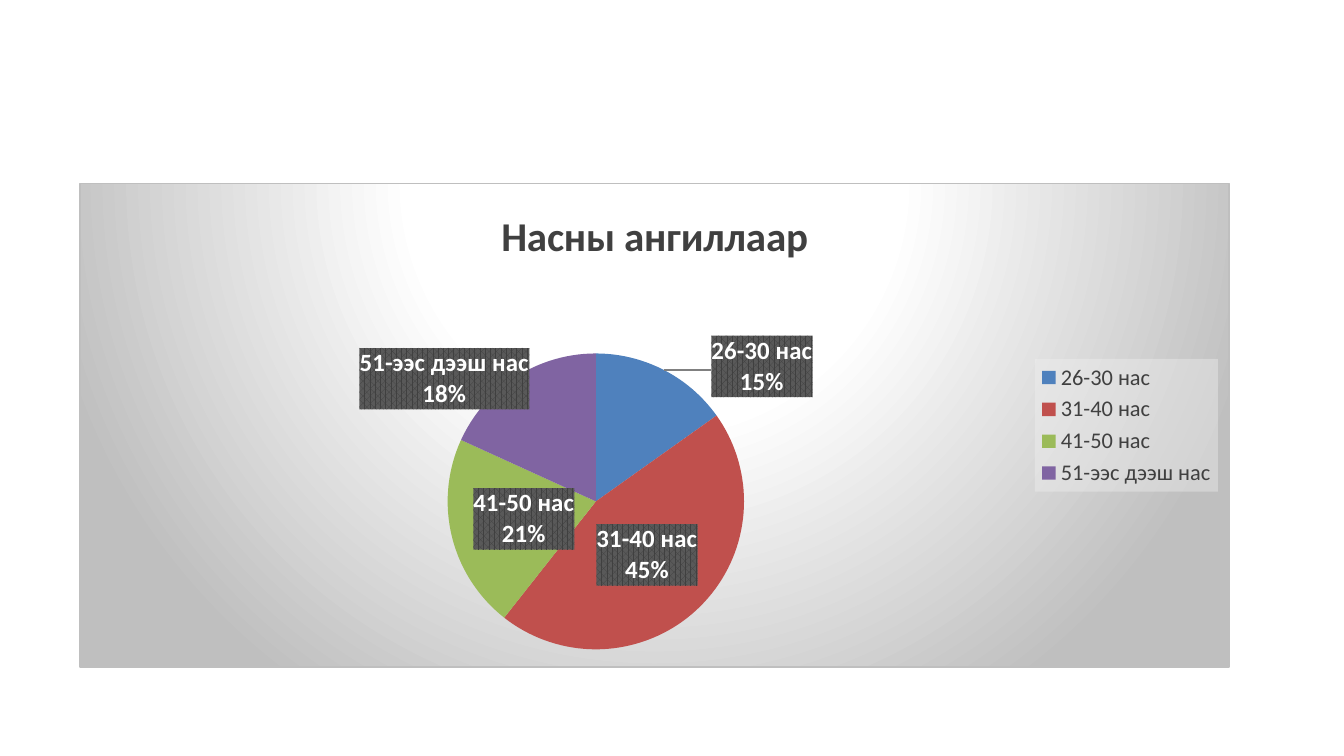
"""Build a slide with a pie chart of age groups."""
import lxml.etree
import pptx
import pptx.chart.data
import pptx.dml.color
import pptx.enum.chart
import pptx.oxml.ns
import pptx.util

Inches, Pt = pptx.util.Inches, pptx.util.Pt
RGBColor = pptx.dml.color.RGBColor
qn = pptx.oxml.ns.qn

TITLE = "Насны ангиллаар"
BLACK = RGBColor(0x00, 0x00, 0x00)
WHITE = RGBColor(0xFF, 0xFF, 0xFF)
DARK = RGBColor(0x40, 0x40, 0x40)
GREY = RGBColor(0x59, 0x59, 0x59)
MID_GREY = RGBColor(0x80, 0x80, 0x80)
SILVER = RGBColor(0xBF, 0xBF, 0xBF)
PALE = RGBColor(0xF2, 0xF2, 0xF2)
AGE_GROUPS = [
    ("26-30 нас", 15, RGBColor(0x4F, 0x81, 0xBD)),
    ("31-40 нас", 45, RGBColor(0xC0, 0x50, 0x4D)),
    ("41-50 нас", 21, RGBColor(0x9B, 0xBB, 0x59)),
    ("51-ээс дээш нас", 18, RGBColor(0x80, 0x64, 0xA2)),
]
LABEL_SHIFTS = {0: (0.115, -0.143), 3: (-0.097, -0.125)}
PIE_AREA = {"x": 0.32, "y": 0.35, "w": 0.258, "h": 0.615}

BACKDROP = f"""<a:gradFill><a:gsLst>
<a:gs pos="0"><a:srgbClr val="{WHITE}"/></a:gs>
<a:gs pos="39000"><a:srgbClr val="{WHITE}"/></a:gs>
<a:gs pos="100000"><a:srgbClr val="{SILVER}"/></a:gs></a:gsLst>
<a:path path="circle"><a:fillToRect l="50000" t="-80000" r="50000" b="180000"/></a:path>
</a:gradFill><a:ln w="9525"><a:solidFill><a:srgbClr val="{SILVER}"/></a:solidFill></a:ln>"""
LABEL_FILL = f"""<a:pattFill prst="pct75"><a:fgClr><a:srgbClr val="{DARK}"/></a:fgClr>
<a:bgClr><a:srgbClr val="{GREY}"/></a:bgClr></a:pattFill>"""
LEGEND_FILL = f"""<a:solidFill><a:srgbClr val="{PALE}"><a:alpha val="39000"/></a:srgbClr></a:solidFill>"""
LEADER_LINE = f"""<c:spPr><a:ln w="9525"><a:solidFill><a:srgbClr val="{MID_GREY}"/></a:solidFill></a:ln></c:spPr>"""


def chart_xml(tag, content):
    return lxml.etree.fromstring(
        f'<c:{tag} xmlns:c="http://schemas.openxmlformats.org/drawingml/2006/chart" '
        f'xmlns:a="http://schemas.openxmlformats.org/drawingml/2006/main">{content}</c:{tag}>'
    )


def manual_layout(values):
    modes = "".join(f'<c:{key}Mode val="edge"/>' for key in "xy") if "w" in values else ""
    sizes = "".join(f'<c:{key} val="{value}"/>' for key, value in values.items())
    target = '<c:layoutTarget val="inner"/>' if modes else ""
    return chart_xml("layout", f"<c:manualLayout>{target}{modes}{sizes}</c:manualLayout>")


def set_font(font, size, color, bold=False):
    font.name, font.size, font.bold = "Calibri", Pt(size), bold
    font.color.rgb = color


def style_label(label, element):
    set_font(label.font, 13.3, WHITE, True)
    label.position = pptx.enum.chart.XL_LABEL_POSITION.CENTER
    text = element.find(qn("c:txPr"))
    text.find(qn("a:bodyPr")).set("wrap", "none")
    text.addprevious(chart_xml("spPr", LABEL_FILL))
    for flag, shown in (("showVal", 0), ("showCatName", 1), ("showPercent", 1)):
        element.find(qn(f"c:{flag}")).set("val", str(shown))
    element.find(qn("c:showBubbleSize")).addnext(chart_xml("separator", "\n"))


deck = pptx.Presentation()
deck.slide_width = Inches(10)
deck.slide_height = deck.slide_width * 9 // 16
slide = deck.slides.add_slide(deck.slide_layouts[6])

ages = pptx.chart.data.CategoryChartData()
ages.categories = [name for name, _, _ in AGE_GROUPS]
ages.add_series(TITLE, [share for _, share, _ in AGE_GROUPS])
chart = slide.shapes.add_chart(
    pptx.enum.chart.XL_CHART_TYPE.PIE,
    Inches(0.59), Inches(1.36), Inches(8.56), Inches(3.61), ages,
).chart
set_font(chart.font, 10, BLACK)
chart_space = chart.element
chart_space.find(qn("c:chart")).addnext(chart_xml("spPr", BACKDROP))

heading = chart.chart_title.text_frame.paragraphs[0]
heading.text = TITLE
set_font(heading.font, 22, DARK, True)
chart.chart_title.include_in_layout = False

chart.has_legend = True
legend = chart.legend
legend.position = pptx.enum.chart.XL_LEGEND_POSITION.RIGHT
legend.include_in_layout = False
set_font(legend.font, 12, DARK)
chart_space.find(f".//{qn('c:legend')}/{qn('c:txPr')}").addprevious(chart_xml("spPr", LEGEND_FILL))

plot_area = chart_space.find(f".//{qn('c:plotArea')}")
for automatic in plot_area.findall(qn("c:layout")):
    plot_area.remove(automatic)
plot_area.insert(0, manual_layout(PIE_AREA))

chart.plots[0].vary_by_categories = True
slices = chart.plots[0].series[0]
for index, (_, _, color) in enumerate(AGE_GROUPS):
    fill = slices.points[index].format.fill
    fill.solid()
    fill.fore_color.rgb = color

shared_labels = slices.data_labels
shared_element = chart_space.find(f".//{qn('c:ser')}/{qn('c:dLbls')}")
style_label(shared_labels, shared_element)
shared_element.find(qn("c:showLeaderLines")).addnext(chart_xml("leaderLines", LEADER_LINE))
for index, (x, y) in LABEL_SHIFTS.items():
    label = slices.points[index].data_label
    label.position = pptx.enum.chart.XL_LABEL_POSITION.CENTER
    element = shared_element.findall(qn("c:dLbl"))[-1]
    style_label(label, element)
    element.find(qn("c:idx")).addnext(manual_layout({"x": x, "y": y}))

deck.save("out.pptx")
